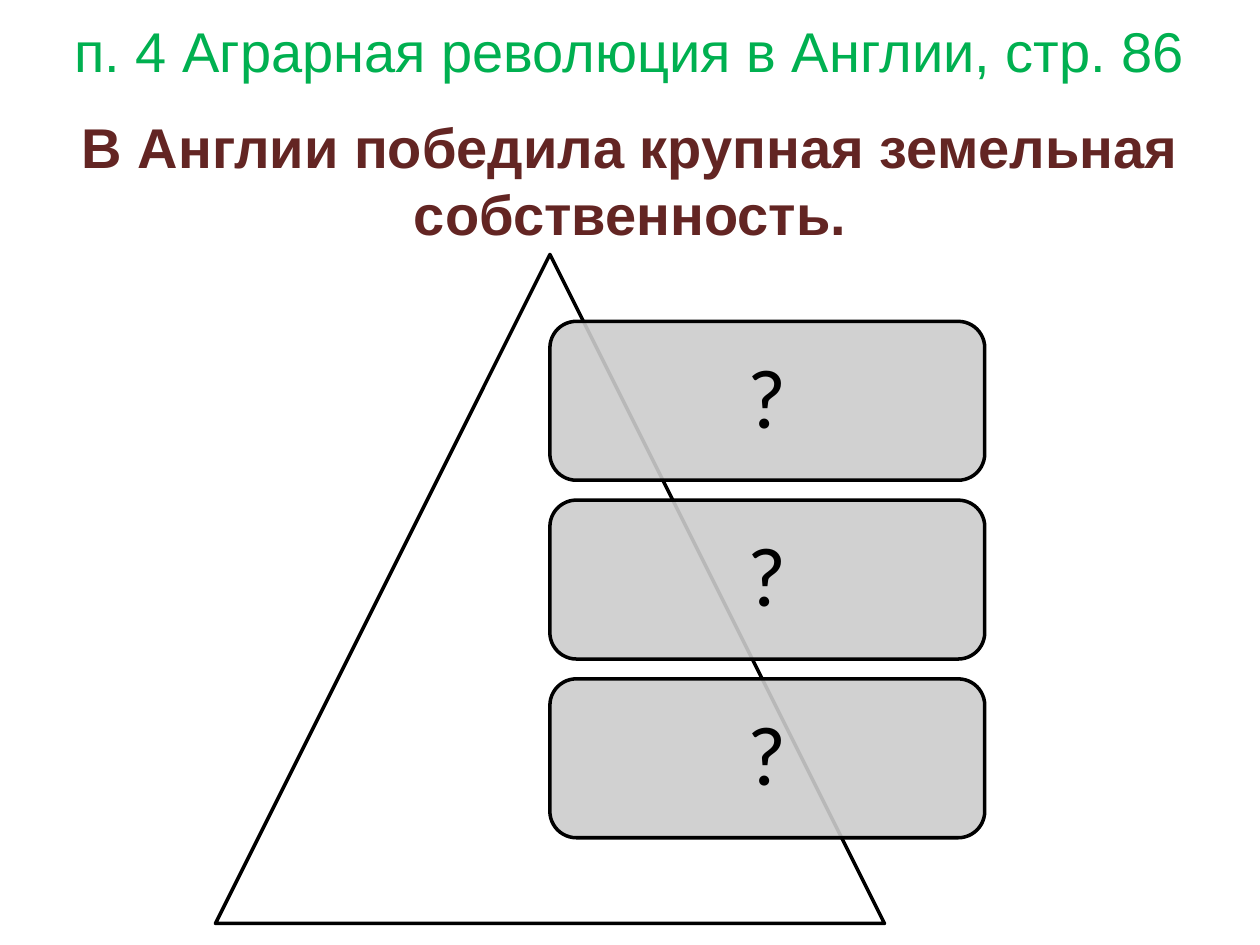
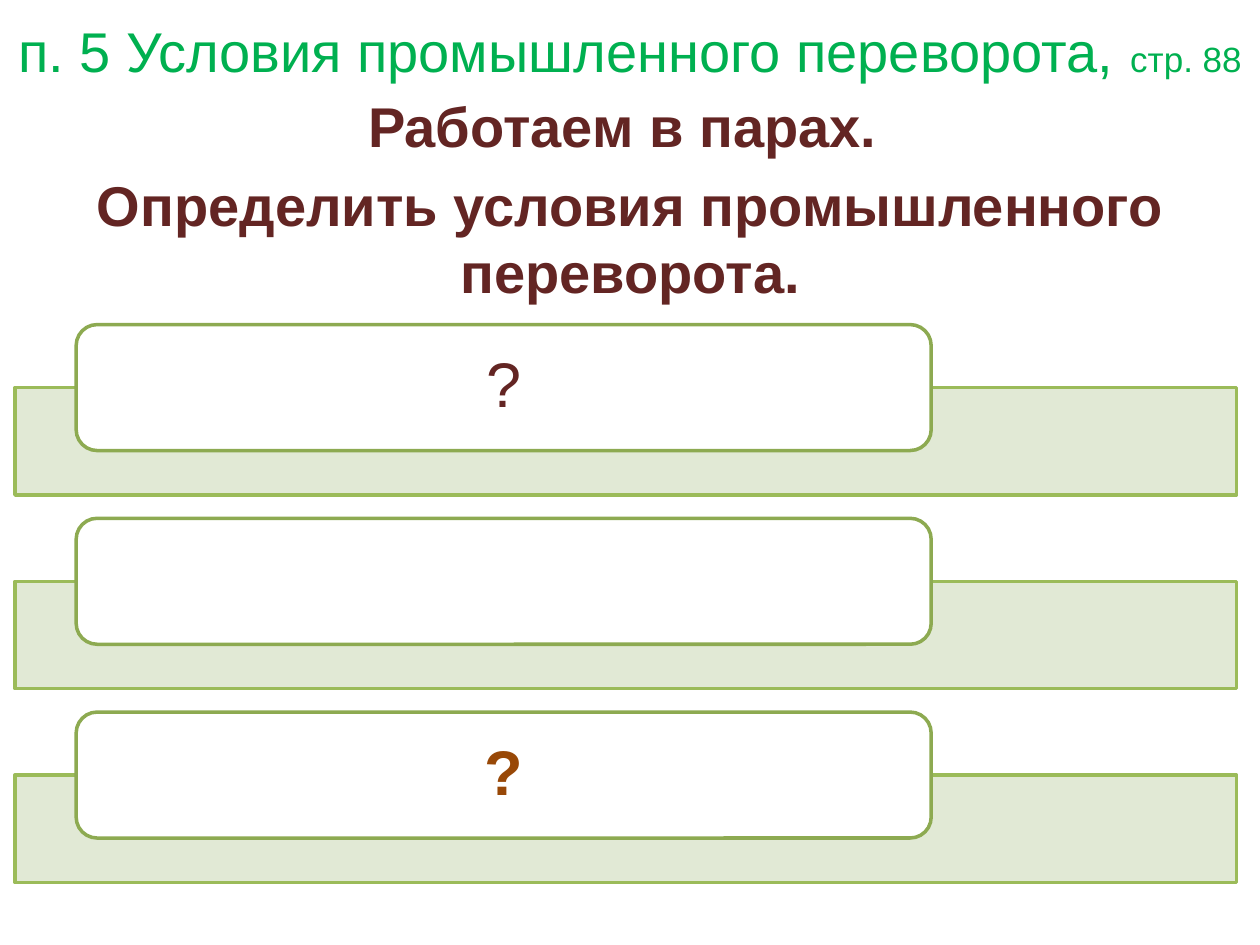
from dataclasses import dataclass

from lxml.etree import SubElement
from pptx import Presentation
from pptx.dml.color import RGBColor
from pptx.enum.shapes import MSO_SHAPE
from pptx.enum.text import MSO_ANCHOR, MSO_AUTO_SIZE, PP_ALIGN
from pptx.oxml.ns import qn
from pptx.util import Pt

SLIDE_WIDTH, SLIDE_HEIGHT = 720, 540


@dataclass(frozen=True)
class Theme:
    heading: str = "00B050"
    maroon: str = "632523"
    brown: str = "984807"
    black: str = "000000"
    white: str = "FFFFFF"
    grey: str = "CCCCCC"
    pale_green: str = "DEE7D1"
    bar_green: str = "9BBB59"
    tab_green: str = "8DAA51"
    font: str = "Arial"
    card_font: str = "Calibri"
    heading_size: int = 32
    page_size: int = 20
    card_size: int = 48
    tab_size: int = 36
    line_width: int = 2
    opacity: int = 90


class Deck:
    def __init__(self, theme):
        self.theme = theme
        self.prs = Presentation()
        self.prs.slide_width = Pt(SLIDE_WIDTH)
        self.prs.slide_height = Pt(SLIDE_HEIGHT)
        self.slide = None

    def style(self, paragraph, size, color, font=None, bold=False):
        paragraph.alignment = PP_ALIGN.CENTER
        paragraph.font.name = font or self.theme.font
        paragraph.font.size = Pt(size)
        paragraph.font.bold = bold
        paragraph.font.color.rgb = RGBColor.from_string(color)

    def new_slide(self, heading, page):
        """Start a slide; the page reference is a (text, size) pair."""
        self.slide = self.prs.slides.add_slide(self.prs.slide_layouts[5])
        title = self.slide.shapes.title
        title.left, title.top = Pt(0), Pt(0)
        title.width, title.height = Pt(SLIDE_WIDTH), Pt(57)
        frame = title.text_frame
        frame.auto_size = MSO_AUTO_SIZE.NONE
        frame.vertical_anchor = MSO_ANCHOR.MIDDLE
        paragraph = frame.paragraphs[0]
        page_text, page_size = page
        paragraph.add_run().text = heading
        page_run = paragraph.add_run()
        page_run.text = page_text
        self.style(paragraph, self.theme.heading_size, self.theme.heading)
        if page_size != self.theme.heading_size:
            page_run.font.size = Pt(page_size)

    def subtitle(self, top, height, *lines):
        box = self.slide.shapes.add_textbox(Pt(20), Pt(top), Pt(680.4), Pt(height))
        frame = box.text_frame
        frame.word_wrap = True
        for index, line in enumerate(lines):
            paragraph = frame.add_paragraph() if index else frame.paragraphs[0]
            paragraph.text = line
            self.style(paragraph, self.theme.heading_size, self.theme.maroon, bold=True)
            if index:
                paragraph.space_before = Pt(0.2 * self.theme.heading_size)

    def shape(self, preset, left, top, width, height, fill, line, opacity=100):
        item = self.slide.shapes.add_shape(preset, Pt(left), Pt(top), Pt(width), Pt(height))
        item.shadow.inherit = False
        item.fill.solid()
        item.fill.fore_color.rgb = RGBColor.from_string(fill)
        if opacity < 100:
            color = item.fill._xPr.find(qn("a:solidFill"))[0]
            SubElement(color, qn("a:alpha"), val=str(opacity * 1000))
        item.line.color.rgb = RGBColor.from_string(line)
        item.line.width = Pt(self.theme.line_width)
        return item

    def label(self, item, text, insets, size, color, font=None, bold=False):
        """Centre text in a shape; insets are (horizontal, vertical)."""
        frame = item.text_frame
        frame.word_wrap = True
        frame.vertical_anchor = MSO_ANCHOR.MIDDLE
        frame.margin_left = frame.margin_right = Pt(insets[0])
        frame.margin_top = frame.margin_bottom = Pt(insets[1])
        paragraph = frame.paragraphs[0]
        paragraph.text = text
        paragraph.line_spacing = 0.9
        self.style(paragraph, size, color, font, bold)


def land_ownership(deck):
    theme = deck.theme
    deck.new_slide("п. 4 Аграрная революция в Англии, ", ("стр. 86", theme.heading_size))
    deck.subtitle(60.5, 85, "В Англии победила крупная земельная собственность.")

    left, top, side = 123.1, 145.4, 382.3
    deck.shape(MSO_SHAPE.ISOSCELES_TRIANGLE, left, top, side, side, theme.white, theme.black)
    card_height = 0.2375 * side
    for row in range(3):
        card_top = top + 0.1 * side + row * card_height * 1.125
        card = deck.shape(MSO_SHAPE.ROUNDED_RECTANGLE, left + side / 2, card_top,
                          0.65 * side, card_height, theme.grey, theme.black, theme.opacity)
        deck.label(card, "?", (14.4, 14.4), theme.card_size, theme.black, theme.card_font)


def revolution_conditions(deck):
    theme = deck.theme
    deck.new_slide("п. 5 Условия промышленного переворота, ", ("стр. 88", theme.page_size))
    deck.subtitle(49, 96.4, "Работаем в парах. ", "Определить условия промышленного переворота.")

    left, first_top, width, pitch = 8.6, 185.5, 698, 110.7
    conditions = [("?", theme.maroon, False), None, ("?", theme.brown, True)]
    for row, condition in enumerate(conditions):
        tab_top = first_top + row * pitch
        deck.shape(MSO_SHAPE.RECTANGLE, left, tab_top + 36, width, 61.4,
                   theme.pale_green, theme.bar_green, theme.opacity)
        tab = deck.shape(MSO_SHAPE.ROUNDED_RECTANGLE, left + 0.05 * width, tab_top,
                         0.7 * width, 72, theme.white, theme.tab_green)
        if condition:
            text, color, bold = condition
            deck.label(tab, text, (18.7, 0), theme.tab_size, color, bold=bold)


def main():
    deck = Deck(Theme())
    land_ownership(deck)
    revolution_conditions(deck)
    deck.prs.save("out.pptx")


if __name__ == "__main__":
    main()
